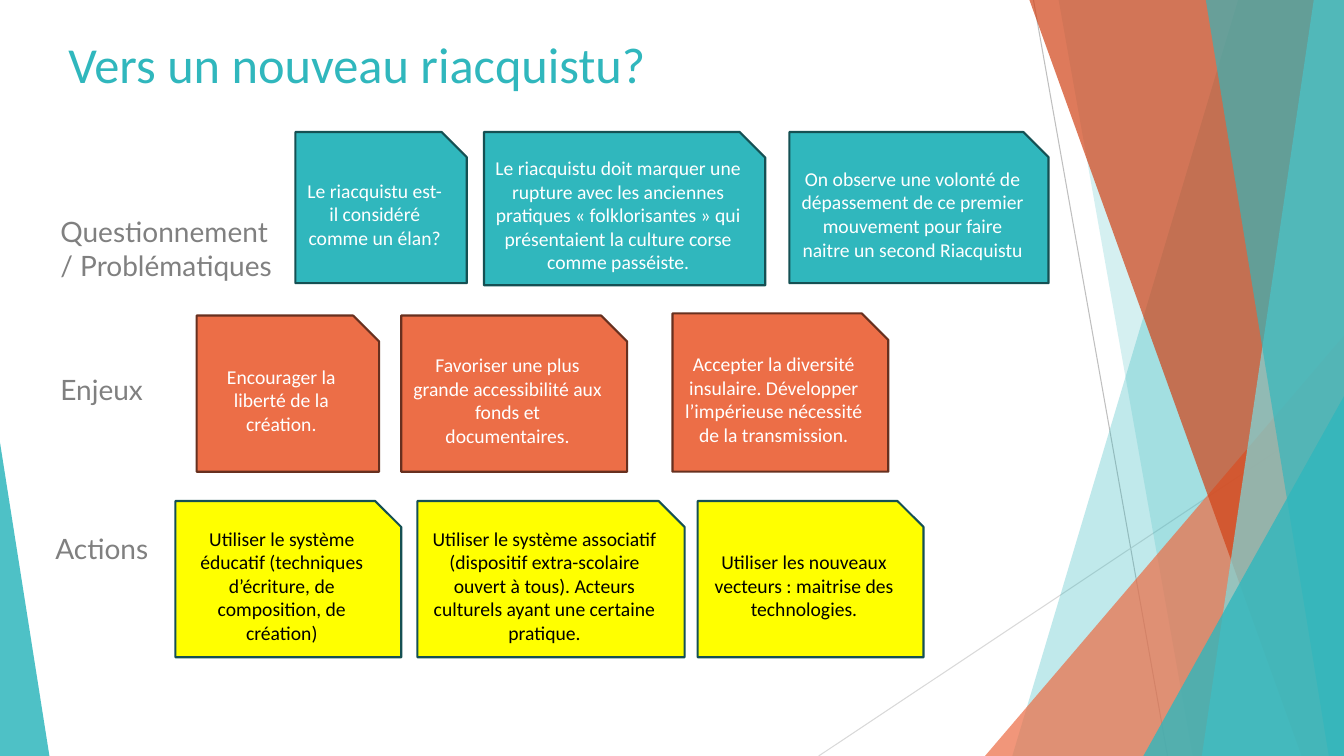
from lxml import etree
from pptx import Presentation
from pptx.dml.color import RGBColor
from pptx.enum.shapes import MSO_CONNECTOR, MSO_SHAPE
from pptx.enum.text import MSO_ANCHOR, PP_ALIGN
from pptx.oxml.ns import qn
from pptx.util import Inches, Pt

WIDTH, HEIGHT = 13.33, 7.5
COLORS = {
    "teal": "30B7BD", "dark teal": "155053", "pale teal": "7CDADE",
    "orange": "EC6E47", "brown": "67301F", "rust": "D14216",
    "yellow": "FFFF00", "white": "FFFFFF", "black": "000000",
    "label": "808080", "gray": "BFBFBF", "light gray": "D9D9D9",
}

# fill, outline, text colour
CARD_STYLES = {
    "questions": ("teal", "dark teal", "white"),
    "stakes": ("orange", "brown", "white"),
    "actions": ("yellow", "dark teal", "black"),
}
LABELS = [
    ("Questionnement / Problématiques", 0.5, 2.08),
    ("Enjeux", 0.5, 3.65),
    ("Actions", 0.45, 5.22),
]
# left, top, width, height, text
CARDS = {
    "questions": [
        (2.93, 1.31, 1.7, 1.5, "Le riacquistu est-il considéré comme un élan?"),
        (4.8, 1.31, 2.79, 1.52,
         "Le riacquistu doit marquer une rupture avec les anciennes pratiques "
         "« folklorisantes » qui présentaient la culture corse comme passéiste."),
        (7.83, 1.31, 2.57, 1.5,
         "On observe une volonté de dépassement de ce premier mouvement "
         "pour faire naitre un second Riacquistu"),
    ],
    "stakes": [
        (1.95, 3.13, 1.81, 1.55, "Encourager la liberté de la création."),
        (3.98, 3.13, 2.24, 1.55,
         "Favoriser une plus grande accessibilité aux fonds et documentaires."),
        (6.67, 3.11, 2.14, 1.57,
         "Accepter la diversité insulaire. Développer l’impérieuse nécessité "
         "de la transmission."),
    ],
    "actions": [
        (1.74, 4.97, 2.24, 1.55,
         "Utiliser le système éducatif (techniques d’écriture, "
         "de composition, de création)"),
        (4.14, 4.97, 2.65, 1.55,
         "Utiliser le système associatif (dispositif extra-scolaire ouvert à tous). "
         "Acteurs culturels ayant une certaine pratique."),
        (6.92, 4.97, 2.24, 1.55,
         "Utiliser les nouveaux vecteurs : maitrise des technologies."),
    ],
}


def color(name):
    return RGBColor.from_string(COLORS[name])


def fill_glass(shape, name, opacity):
    """Fill a shape with a see-through colour and no outline."""
    shape.shadow.inherit = False
    shape.line.fill.background()
    shape.fill.solid()
    shape.fill.fore_color.rgb = color(name)
    tint = shape.fill._xPr.find(qn("a:solidFill"))[0]
    etree.SubElement(tint, qn("a:alpha")).set("val", str(opacity * 1000))


def add_band(page, top_left, bottom_left, name, opacity):
    """Add a facet that runs from a slanted left edge to the slide's right edge."""
    corners = [(WIDTH, 0), (WIDTH, HEIGHT), (bottom_left, HEIGHT)]
    outline = page.shapes.build_freeform(Inches(top_left), 0)
    outline.add_line_segments([(Inches(x), Inches(y)) for x, y in corners])
    fill_glass(outline.convert_to_shape(), name, opacity)


def add_corner(page, left, width, height, peak, name, opacity):
    """Add a triangle standing on the bottom edge; peak is 0 (left) to 1 (right)."""
    triangle = page.shapes.add_shape(
        MSO_SHAPE.ISOSCELES_TRIANGLE, Inches(left), Inches(HEIGHT - height),
        Inches(width), Inches(height))
    triangle.adjustments[0] = peak
    fill_glass(triangle, name, opacity)


def add_hairline(page, start, end, name):
    line = page.shapes.add_connector(
        MSO_CONNECTOR.STRAIGHT, *[Inches(value) for value in start + end])
    line.line.color.rgb = color(name)
    line.line.width = Pt(0.75)
    etree.SubElement(line._element.spPr, qn("a:effectLst"))


def write(box, text, font, size, name, anchor):
    frame = box.text_frame
    frame.word_wrap = True
    frame.vertical_anchor = anchor
    para = frame.paragraphs[0]
    para.text = text
    para.font.name = font
    para.font.size = Pt(size)
    para.font.color.rgb = color(name)
    return para


def add_title(page, text):
    box = page.shapes.add_textbox(Inches(0.58), Inches(0.28), Inches(9.4), Inches(0.7))
    write(box, text, "Calibri", 36, "teal", MSO_ANCHOR.BOTTOM)


def add_label(page, text, left, top):
    box = page.shapes.add_textbox(Inches(left), Inches(top), Inches(2.41), Inches(0.94))
    para = write(box, text, "Lato", 20, "label", MSO_ANCHOR.TOP)
    para.space_before = Pt(10)


def add_card(page, left, top, width, height, text, style):
    fill, outline, ink = style
    card = page.shapes.add_shape(
        MSO_SHAPE.SNIP_1_RECTANGLE, Inches(left), Inches(top),
        Inches(width), Inches(height))
    card.shadow.inherit = False
    card.fill.solid()
    card.fill.fore_color.rgb = color(fill)
    card.line.color.rgb = color(outline)
    card.line.width = Pt(1.5)
    para = write(card, text, "Calibri", 14, ink, MSO_ANCHOR.MIDDLE)
    para.alignment = PP_ALIGN.CENTER


def add_facets(page):
    add_hairline(page, (10.25, 0), (11.58, HEIGHT), "gray")
    add_hairline(page, (WIDTH, 4.03), (8.12, HEIGHT), "light gray")
    add_band(page, 12.28, 10.04, "teal", 30)
    add_band(page, 10.5, 11.83, "teal", 20)
    add_corner(page, 9.77, 3.56, 4.17, 1, "orange", 72)
    add_band(page, 10.21, 12.91, "rust", 70)
    add_band(page, 13.03, 11.92, "pale teal", 70)
    add_band(page, 11.96, 13.18, "teal", 65)
    add_corner(page, 11.34, 1.99, 3.57, 1, "teal", 80)
    add_corner(page, 0, 0.49, 3.11, 0, "teal", 85)


def main():
    deck = Presentation()
    deck.slide_width, deck.slide_height = Inches(WIDTH), Inches(HEIGHT)
    page = deck.slides.add_slide(deck.slide_layouts[6])
    add_facets(page)
    add_title(page, "Vers un nouveau riacquistu?")
    for label in LABELS:
        add_label(page, *label)
    for row, cards in CARDS.items():
        for card in cards:
            add_card(page, *card, CARD_STYLES[row])
    deck.save("out.pptx")


if __name__ == "__main__":
    main()
